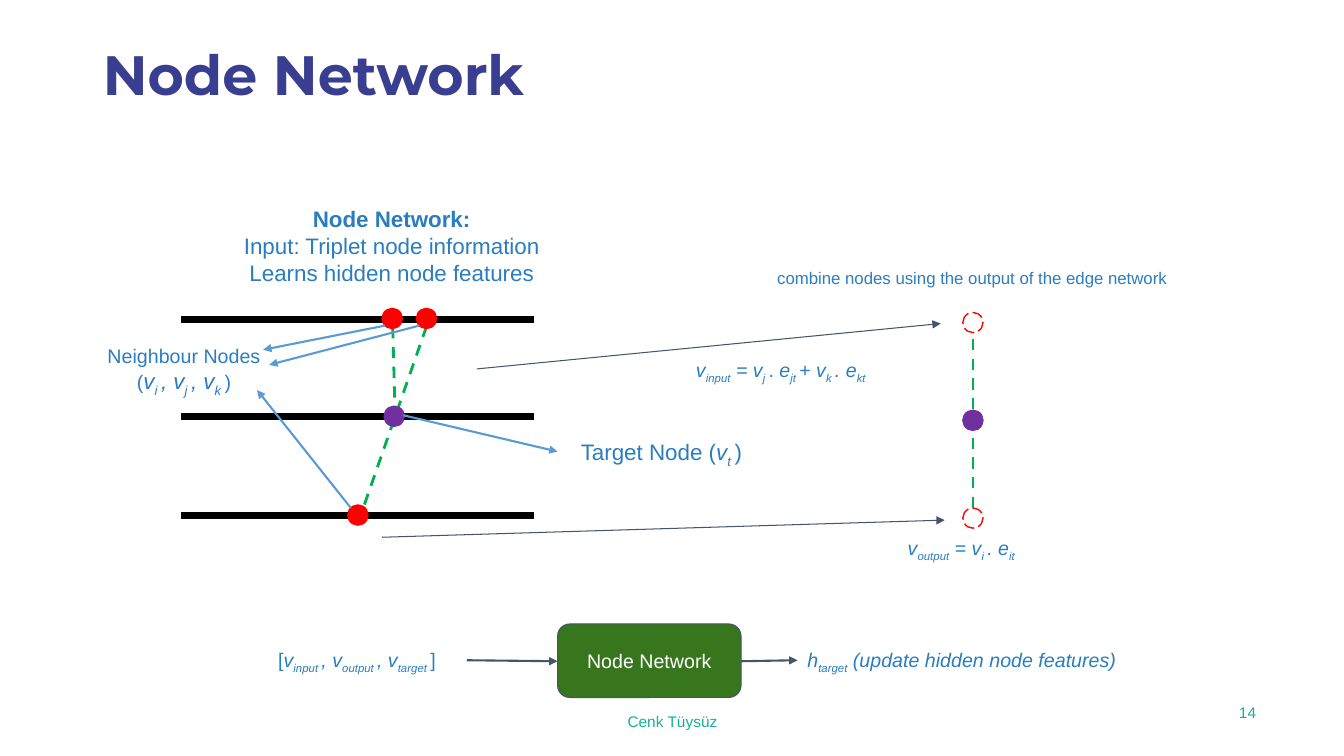
from pptx import Presentation
from pptx.dml.color import RGBColor
from pptx.enum.dml import MSO_LINE
from pptx.enum.shapes import MSO_CONNECTOR, MSO_SHAPE
from pptx.enum.text import MSO_ANCHOR, PP_ALIGN
from pptx.oxml.ns import qn
from pptx.util import Pt
from lxml import etree

PX = 9144  # 100 px to the inch
STRAIGHT = MSO_CONNECTOR.STRAIGHT
OVAL, ROUND = MSO_SHAPE.OVAL, MSO_SHAPE.ROUNDED_RECTANGLE
DASH, LONG = MSO_LINE.DASH, MSO_LINE.LONG_DASH
LEFT, CENTER = PP_ALIGN.LEFT, PP_ALIGN.CENTER
TOP, MIDDLE = MSO_ANCHOR.TOP, MSO_ANCHOR.MIDDLE

NAVY = RGBColor(0x39, 0x3E, 0x91)
BLUE = RGBColor(0x2A, 0x7D, 0xBF)
SKY = RGBColor(0x5B, 0x9B, 0xD5)
SLATE = RGBColor(0x44, 0x54, 0x6A)
TEAL = RGBColor(0x18, 0xAF, 0x9B)
GREEN = RGBColor(0x00, 0xB0, 0x50)
MOSS = RGBColor(0x38, 0x76, 0x1D)
RED = RGBColor(0xFF, 0x00, 0x00)
PURPLE = RGBColor(0x70, 0x30, 0xA0)
BLACK = RGBColor(0x00, 0x00, 0x00)
WHITE = RGBColor(0xFF, 0xFF, 0xFF)


def write(shape, lines, size, color=BLUE, align=CENTER, pad=5,
          anchor=TOP, math=None):
    """Fill a shape with lines in which *...* is italic and _..._ a subscript.

    Italic text takes the size math, if given.
    """
    frame = shape.text_frame
    form = {"word_wrap": True, "vertical_anchor": anchor,
            "margin_left": 10 * PX, "margin_right": 10 * PX,
            "margin_top": pad * PX, "margin_bottom": pad * PX}
    for key, value in form.items():
        setattr(frame, key, value)
    for n, line in enumerate(lines):
        para = frame.add_paragraph() if n else frame.paragraphs[0]
        para.alignment = align
        for i, part in enumerate(line.split("*")):
            for j, text in enumerate(part.split("_")):
                if not text:
                    continue
                run = para.add_run()
                run.text = text
                font = run.font
                font.name = "Arial"
                font.size = Pt(math if math and i % 2 else size)
                font.italic = i % 2 == 1
                font.color.rgb = color
                if j % 2:
                    font._element.set("baseline", "-25000")


def join(ends, color, width, dash=None, arrow=False):
    link = shapes.add_connector(STRAIGHT, *[v * PX for v in ends])
    link.line.color.rgb = color
    link.line.width = Pt(width)
    if dash:
        link.line.dash_style = dash
    props = link._element.spPr
    if arrow:
        etree.SubElement(props.find(qn("a:ln")), qn("a:tailEnd"), type="triangle")
    etree.SubElement(props, qn("a:effectLst"))


deck = Presentation()
deck.slide_width, deck.slide_height = 1333 * PX, 750 * PX
slide = deck.slides.add_slide(deck.slide_layouts[5])
shapes = slide.shapes

# Title
title = shapes.title
title.left, title.top, title.width, title.height = [
    v * PX for v in (92, 40, 1150, 73)]
write(title, ["Node Network"], 39.6, NAVY, LEFT, anchor=MIDDLE)
head = title.text_frame.paragraphs[0]
head.line_spacing = 0.9
head.runs[0].font.name = "Montserrat"
head.runs[0].font.bold = True

# Edges and detector layers
for ends in ((392, 414, 389, 306), (355, 519, 423, 324), (965, 504, 965, 329)):
    join(ends, GREEN, 2, DASH)
for y in (317, 413, 511):
    join((180, y, 530, y), BLACK, 5)

# Nodes
DOT = 20
for x, y, color, full in (
        (345, 501, RED, True), (381, 403, PURPLE, True),
        (413, 306, RED, True), (379, 306, RED, True),
        (955, 504, RED, False), (955, 407, PURPLE, True),
        (955, 310, RED, False)):
    node = shapes.add_shape(OVAL, x * PX, y * PX, DOT * PX, DOT * PX)
    node.shadow.inherit = False
    node.line.color.rgb = color
    node.line.width = Pt(1)
    if full:
        node.fill.solid()
        node.fill.fore_color.rgb = color
    else:
        node.fill.background()
        node.line.dash_style = LONG

# Network block
block = shapes.add_shape(ROUND, 553 * PX, 619 * PX, 182 * PX, 73 * PX)
block.shadow.inherit = False
block.fill.solid()
block.fill.fore_color.rgb = MOSS
block.line.color.rgb = SLATE
block.line.width = Pt(0.75)
write(block, ["Node Network"], 14, WHITE, pad=10, anchor=MIDDLE)

# Arrows
for color, width, paths in (
        (SKY, 1.5, ((400, 412, 553, 448), (416, 323, 267, 362),
                    (382, 323, 261, 347), (348, 504, 255, 387))),
        (SLATE, 0.75, ((473, 366, 933, 321), (379, 533, 937, 516))),
        (SLATE, 1.5, ((463, 655, 553, 656), (735, 656, 791, 655)))):
    for ends in paths:
        join(ends, color, width, arrow=True)

# Labels
heading = ["Node Network:", "Input: Triplet node information",
           "Learns hidden node features"]
formula = {"size": 14, "pad": 10}
foot = {"size": 11, "color": TEAL}
for place, lines, form in (
        ((110, 199, 557, 91), heading, {"size": 16}),
        ((90, 336, 185, 73),
         ["Neighbour Nodes", "(*v_i _, v_j _, v_k _*)"],
         {"size": 14, "math": 16}),
        ((553, 430, 206, 37), ["Target Node (*v_t _*)"], {"size": 16}),
        ((686, 261, 557, 44),
         ["combine nodes using the output of the edge network"], {"size": 12}),
        ((612, 345, 328, 44),
         ["*v_input_ = v_j _*. *e_jt _*+ *v_k _. e_kt _*"], formula),
        ((791, 522, 328, 44), ["*v_output_ = v_i _. e_it _*"], formula),
        ((245, 633, 218, 44),
         ["[*v_input _, v_output _, v_target _*]"], formula),
        ((791, 633, 436, 44),
         ["*h_target_ (update hidden node features)*"],
         {**formula, "align": LEFT}),
        ((373, 696, 588, 40), ["Cenk Tüysüz"], {**foot, "anchor": MIDDLE}),
        ((1219, 693, 46, 40), ["14"], {**foot, "align": LEFT})):
    label = shapes.add_textbox(*[v * PX for v in place])
    write(label, lines, **form)
    if lines is heading:
        label.text_frame.paragraphs[0].runs[0].font.bold = True

deck.save("out.pptx")
